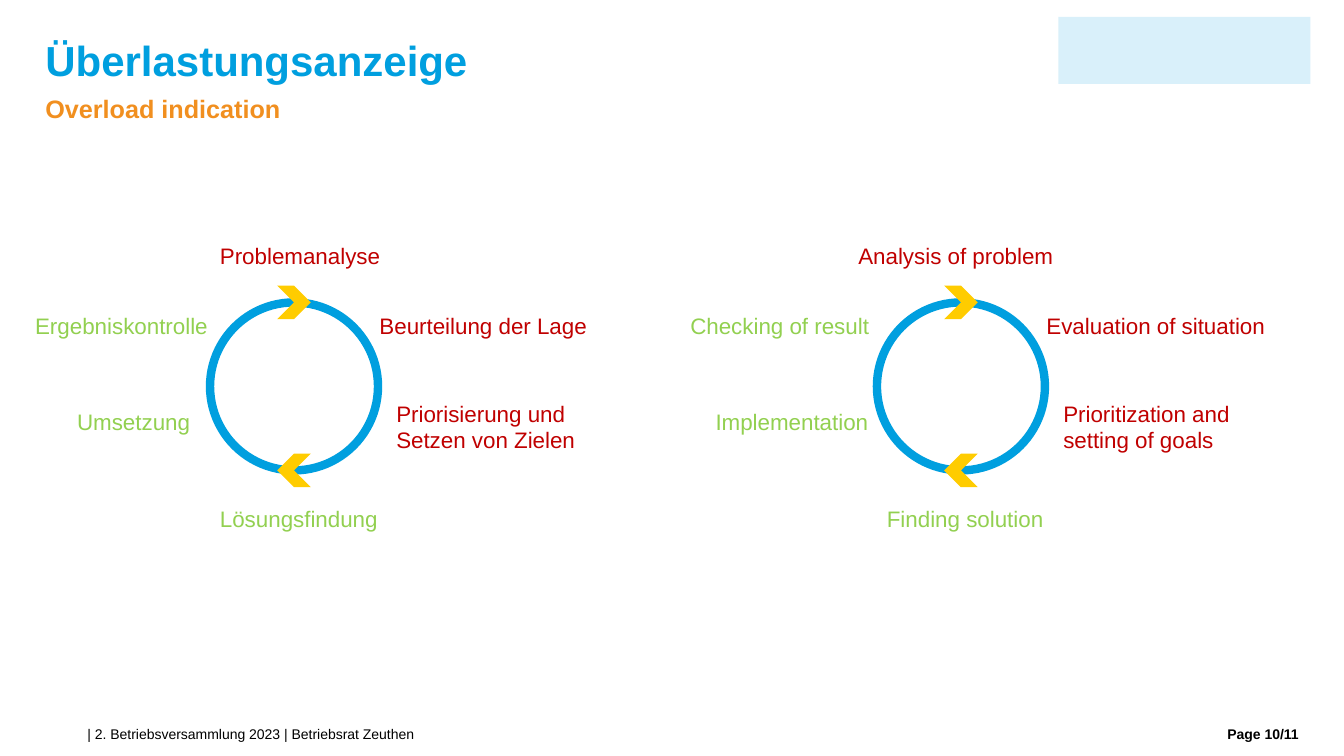
from dataclasses import dataclass

import pptx
import pptx.dml.color
import pptx.enum.shapes
import pptx.enum.text
import pptx.util

COLS, ROWS = 80, 45
CELL = pptx.util.Inches(13.333) / COLS
BLUE, ORANGE, YELLOW = "009FDF", "F18F1F", "FFCC00"
RED, GREEN, BLACK, WHITE = "C00000", "92D050", "000000", "FFFFFF"
PALE = "D9F0FA"
RING_TOP, RING_SIZE, CHEVRON_SIZE = 18, 10, 2

MSO_SHAPE = pptx.enum.shapes.MSO_SHAPE
ALIGN = pptx.enum.text.PP_ALIGN
ANCHOR = pptx.enum.text.MSO_ANCHOR


@dataclass
class Box:
    """Place and size in grid columns and rows."""
    col: float
    row: float
    width: float
    height: float


@dataclass
class Style:
    size: float
    color: str
    bold: bool = False
    align: ALIGN = ALIGN.LEFT
    spacing: float = 1.0


@dataclass
class Step:
    """A label of a cycle; col counts from the left edge of its ring."""
    text: str
    col: float
    width: float


@dataclass
class Cycle:
    col: float
    steps: list[Step]


# Row and colour of the six steps, clockwise from the top
STEP_ROWS = [(14.1, RED), (18.3, RED), (23.5, RED),
             (29.8, GREEN), (24, GREEN), (18.3, GREEN)]

CYCLES = [
    Cycle(12.5, [
        Step("Problemanalyse", 0, 10.9),
        Step("Beurteilung der Lage", 9.5, 13.7),
        Step("Priorisierung und\nSetzen von Zielen", 10.5, 12),
        Step("Lösungsfindung", 0, 10.7),
        Step("Umsetzung", -8.5, 8),
        Step("Ergebniskontrolle", -11, 11.6),
    ]),
    Cycle(52.2, [
        Step("Analysis of problem", -1.7, 13),
        Step("Evaluation of situation", 9.5, 14.4),
        Step("Prioritization and\nsetting of goals", 10.5, 11.2),
        Step("Finding solution", 0, 10.6),
        Step("Implementation", -10.2, 10.4),
        Step("Checking of result", -11.7, 12),
    ]),
]


def rgb(color: str) -> pptx.dml.color.RGBColor:
    return pptx.dml.color.RGBColor.from_string(color)


def emu(box: Box) -> list[int]:
    return [round(n * CELL) for n in (box.col, box.row, box.width, box.height)]


def write(tf, text: str, style: Style) -> None:
    """Fill a text frame, one paragraph for each line of text."""
    for i, line in enumerate(text.split("\n")):
        p = tf.add_paragraph() if i else tf.paragraphs[0]
        p.alignment = style.align
        p.line_spacing = style.spacing
        r = p.add_run()
        r.text = line
        r.font.name = "Arial"
        r.font.size = pptx.util.Pt(style.size)
        r.font.bold = style.bold
        r.font.color.rgb = rgb(style.color)


def clear_margins(tf) -> None:
    tf.margin_left = tf.margin_top = tf.margin_right = tf.margin_bottom = 0
    tf.word_wrap = True


def add_title(s, box: Box, text: str, style: Style) -> None:
    sp = s.shapes.title
    sp.left, sp.top, sp.width, sp.height = emu(box)
    clear_margins(sp.text_frame)
    sp.text_frame.vertical_anchor = ANCHOR.MIDDLE
    write(sp.text_frame, text, style)


def add_text(s, box: Box, text: str, style: Style) -> None:
    tf = s.shapes.add_textbox(*emu(box)).text_frame
    clear_margins(tf)
    write(tf, text, style)


def add_label(s, box: Box, text: str, color: str) -> None:
    tf = s.shapes.add_textbox(*emu(box)).text_frame
    tf.word_wrap = False
    tf.auto_size = pptx.enum.text.MSO_AUTO_SIZE.SHAPE_TO_FIT_TEXT
    write(tf, text, Style(16, color))


def add_shape(s, kind: MSO_SHAPE, box: Box, fill: str, line: str = ""):
    sp = s.shapes.add_shape(kind, *emu(box))
    sp.shadow.inherit = False
    sp.fill.solid()
    sp.fill.fore_color.rgb = rgb(fill)
    if line:
        sp.line.color.rgb = rgb(line)
        sp.line.width = pptx.util.Pt(6)
    else:
        sp.line.fill.background()
    return sp


def add_cycle(s, cycle: Cycle) -> None:
    """Draw a ring with a chevron at its top and bottom, and its steps."""
    add_shape(s, MSO_SHAPE.OVAL,
              Box(cycle.col, RING_TOP, RING_SIZE, RING_SIZE), WHITE, BLUE)
    chevron_col = cycle.col + (RING_SIZE - CHEVRON_SIZE) / 2
    for center, flip in ((RING_TOP, False), (RING_TOP + RING_SIZE, True)):
        sp = add_shape(s, MSO_SHAPE.CHEVRON,
                       Box(chevron_col, center - CHEVRON_SIZE / 2,
                           CHEVRON_SIZE, CHEVRON_SIZE), YELLOW)
        if flip:
            sp.element.spPr.xfrm.set("flipH", "1")
    for step, (row, color) in zip(cycle.steps, STEP_ROWS):
        height = 0.6 + 1.6 * len(step.text.split("\n"))
        add_label(s, Box(cycle.col + step.col, row, step.width, height),
                  step.text, color)


def main() -> None:
    prs = pptx.Presentation()
    prs.slide_width, prs.slide_height = round(COLS * CELL), round(ROWS * CELL)
    s = prs.slides.add_slide(prs.slide_layouts[5])
    add_title(s, Box(2.7, 2.28, 74.6, 2.94), "Überlastungsanzeige",
              Style(30, BLUE, bold=True, spacing=0.9))
    add_text(s, Box(2.7, 5.35, 74.6, 2.45), "Overload indication",
             Style(18, ORANGE, bold=True, spacing=1.1))
    add_shape(s, MSO_SHAPE.RECTANGLE, Box(63, 1, 15, 4), PALE)
    add_text(s, Box(5.2, 43.2, 65.3, 1.2),
             "| 2. Betriebsversammlung 2023 | Betriebsrat Zeuthen",
             Style(10, BLACK))
    add_text(s, Box(71.2, 43.2, 6.1, 1.2), "Page 10/11",
             Style(10, BLACK, bold=True, align=ALIGN.RIGHT))
    for cycle in CYCLES:
        add_cycle(s, cycle)
    prs.save("out.pptx")


if __name__ == "__main__":
    main()
